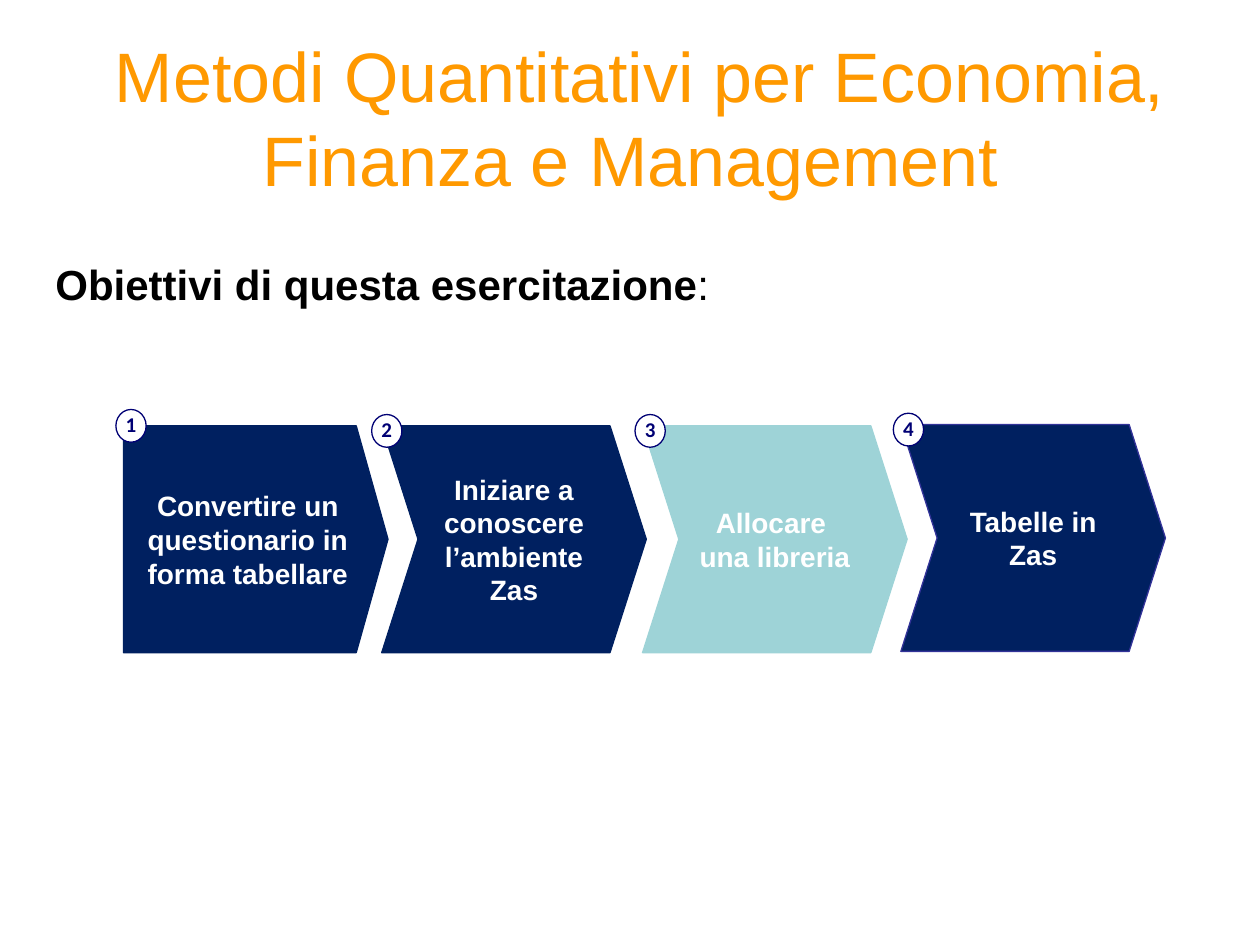
from pptx import Presentation
from pptx.dml.color import RGBColor
from pptx.enum.shapes import MSO_SHAPE
from pptx.enum.text import MSO_ANCHOR, MSO_AUTO_SIZE, PP_ALIGN
from pptx.util import Inches, Pt


def color(value):
    return RGBColor.from_string(value)


def write(shape, spans, font, align, frame_format):
    """Fill a shape with one paragraph; spans are (text, bold) pairs."""
    frame = shape.text_frame
    for name, value in frame_format.items():
        setattr(frame, name, value)
    para = frame.paragraphs[0]
    para.alignment = align
    para.space_before = Pt(0)
    for text, bold in spans:
        for index, line_text in enumerate(text.split("\n")):
            if index:
                para.add_line_break()
            span = para.add_run()
            span.text = line_text
            span.font.bold = bold
            span.font.color.rgb = color(font["color"])
            span.font.name = font["name"]
            span.font.size = Pt(font["size"])
    return para


deck = Presentation()
deck.slide_width, deck.slide_height = Inches(10), Inches(7.5)
page = deck.slides.add_slide(deck.slide_layouts[5])

# Title
title = page.shapes.title
title.left, title.top = Inches(0.5), Inches(0.3)
title.width, title.height = Inches(9), Inches(1.25)
write(title, [(" Metodi Quantitativi per Economia, Finanza e Management", False)],
      {"name": "Arial", "size": 40, "color": "FF9900"}, PP_ALIGN.CENTER,
      {"word_wrap": True, "auto_size": MSO_AUTO_SIZE.NONE,
       "vertical_anchor": MSO_ANCHOR.MIDDLE})

# Heading of the goals
heading = page.shapes.add_textbox(Inches(0.25), Inches(2), Inches(9.5), Inches(3.53))
write(heading, [("Obiettivi di questa esercitazione", True), (":", False)],
      {"name": "Arial", "size": 24, "color": "000000"}, PP_ALIGN.LEFT,
      {"word_wrap": True, "margin_left": Inches(0.19)})

# Process steps: kind, point depth, left, top, fill, line, text, badge left, badge top
PENTAGON, CHEVRON = MSO_SHAPE.PENTAGON, MSO_SHAPE.CHEVRON
steps = [
    (PENTAGON, 0.14, 0.98, 3.38, "002060", "002060",
     "Convertire un questionario in forma tabellare", 0.92, 3.25),
    (CHEVRON, 0.16, 3.03, 3.38, "002060", "002060",
     "Iniziare a conoscere l’ambiente Zas", 2.95, 3.29),
    (CHEVRON, 0.16, 5.1, 3.38, "9ED3D7", "9ED3D7",
     "Allocare \nuna libreria", 5.04, 3.29),
    (CHEVRON, 0.16, 7.15, 3.37, "002060", "333399",
     "Tabelle in Zas", 7.09, 3.28),
]
step_font = {"name": "Arial", "size": 16, "color": "FFFFFF"}
step_frame = {"word_wrap": True, "vertical_anchor": MSO_ANCHOR.MIDDLE,
              "margin_left": Inches(0.08), "margin_right": Inches(0.08),
              "margin_top": Inches(0.04), "margin_bottom": Inches(0.04)}
badge_font = {"name": "Calibri", "size": 12, "color": "000074"}
badge_frame = {"word_wrap": False, "vertical_anchor": MSO_ANCHOR.MIDDLE}

for number, (kind, depth, left, top, fill, line, text,
             badge_left, badge_top) in enumerate(steps, 1):
    step = page.shapes.add_shape(kind, Inches(left), Inches(top), Inches(2.1), Inches(1.8))
    step.adjustments[0] = depth
    badge = page.shapes.add_shape(MSO_SHAPE.OVAL, Inches(badge_left), Inches(badge_top),
                                  Inches(0.24), Inches(0.26))
    for shape, fill_color, line_color in ((step, fill, line), (badge, "FFFFFF", "000074")):
        shape.shadow.inherit = False
        shape.fill.solid()
        shape.fill.fore_color.rgb = color(fill_color)
        shape.line.color.rgb = color(line_color)
        shape.line.width = Pt(0.75)
    write(step, [(text, True)], step_font, PP_ALIGN.CENTER, step_frame)
    label = write(badge, [(str(number), True)], badge_font, PP_ALIGN.CENTER, badge_frame)
    label.line_spacing = 0.9

deck.save("out.pptx")
